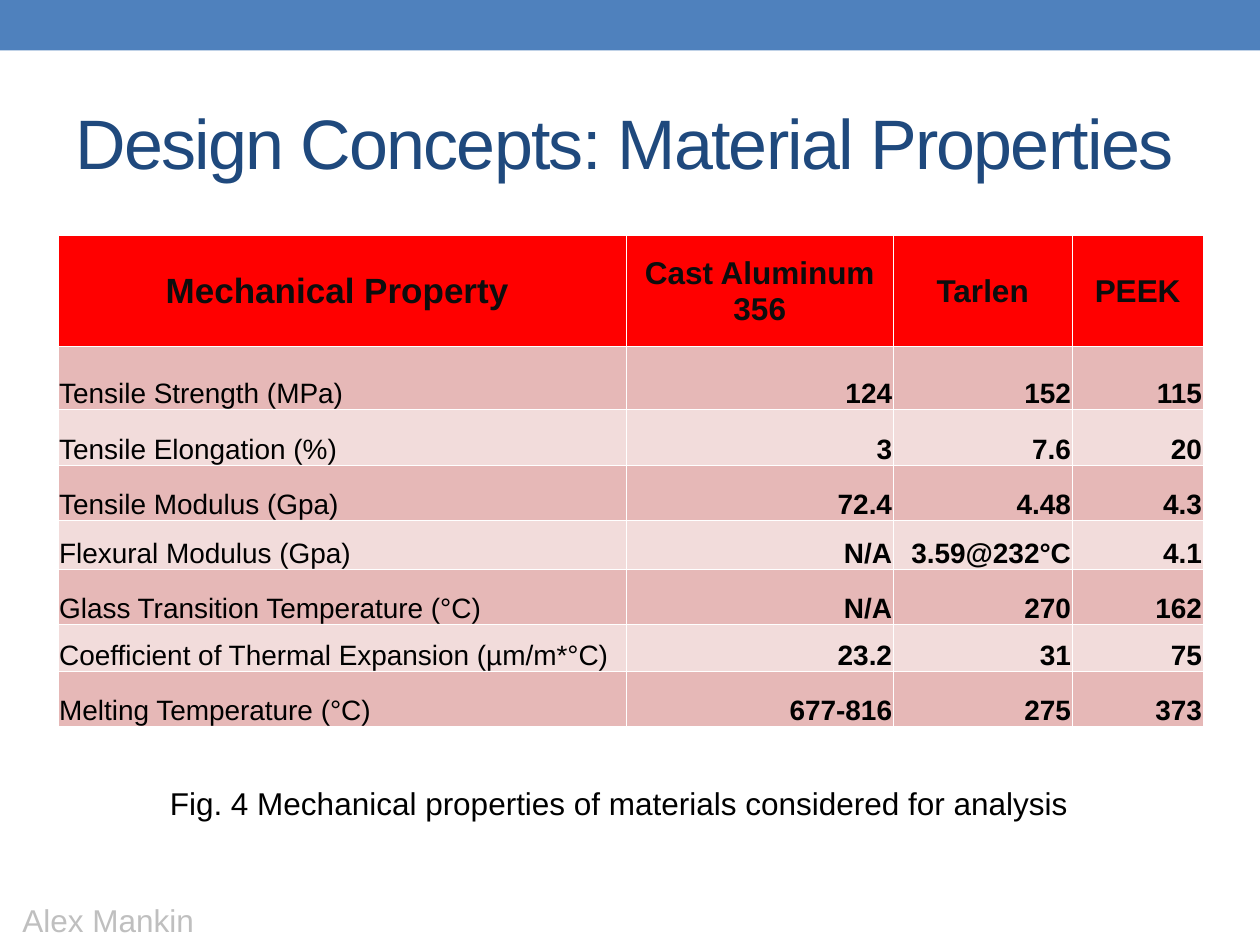
from lxml import etree
from pptx import Presentation
from pptx.dml.color import RGBColor
from pptx.enum.shapes import MSO_SHAPE
from pptx.enum.text import MSO_ANCHOR, MSO_AUTO_SIZE, PP_ALIGN
from pptx.oxml.ns import qn
from pptx.util import Inches, Pt

RECTANGLE = MSO_SHAPE.RECTANGLE
LEFT, CENTER, RIGHT = PP_ALIGN.LEFT, PP_ALIGN.CENTER, PP_ALIGN.RIGHT
MIDDLE, BOTTOM = MSO_ANCHOR.MIDDLE, MSO_ANCHOR.BOTTOM
NO_FIT, GROW = MSO_AUTO_SIZE.NONE, MSO_AUTO_SIZE.SHAPE_TO_FIT_TEXT
TITLE_ONLY = 5

HEADER = ["Mechanical Property ", "Cast Aluminum 356", "Tarlen", "PEEK"]
PROPERTIES = [
    ["Tensile Strength (MPa)", "124", "152", "115"],
    ["Tensile Elongation (%)", "3", "7.6", "20"],
    ["Tensile Modulus (Gpa)", "72.4", "4.48", "4.3"],
    ["Flexural Modulus (Gpa)", "N/A", "3.59@232°C", "4.1"],
    ["Glass Transition Temperature (°C)", "N/A", "270", "162"],
    ["Coefficient of Thermal Expansion (µm/m*°C)", "23.2", "31", "75"],
    ["Melting Temperature (°C)", "677-816", "275", "373"],
]
COLUMN_WIDTHS = [4.51, 2.12, 1.42, 1.04]
ROW_HEIGHTS = [0.88, 0.5, 0.44, 0.44, 0.39, 0.44, 0.37, 0.44]


def color(hex_code):
    return RGBColor.from_string(hex_code)


class SlideBuilder:
    font = "Arial"
    ink = "000000"
    accent = "4F81BD"
    title_ink = "1F497D"
    muted = "BFBFBF"
    header_ink = "0D0D0D"
    header_fill = "FF0000"
    bands = ("E6B8B7", "F2DCDB")
    rule = "FFFFFF"

    def __init__(self, slide):
        self.slide = slide

    def add_text(self, frame, text, size, ink, align=LEFT, bold=False):
        paragraph = frame.paragraphs[0]
        paragraph.alignment = align
        run = paragraph.add_run()
        run.text = text
        run.font.name = self.font
        run.font.size = Pt(size)
        run.font.bold = bold
        run.font.color.rgb = color(ink)
        return run

    def bar(self, left, top, width, height):
        band = self.slide.shapes.add_shape(
            RECTANGLE, Inches(left), Inches(top), Inches(width), Inches(height))
        band.shadow.inherit = False
        band.fill.solid()
        band.fill.fore_color.rgb = color(self.accent)
        band.line.fill.background()

    def title(self, text, left, top, width, height):
        heading = self.slide.shapes.title
        heading.left, heading.top = Inches(left), Inches(top)
        heading.width, heading.height = Inches(width), Inches(height)
        frame = heading.text_frame
        frame.auto_size = NO_FIT
        frame.vertical_anchor = MIDDLE
        run = self.add_text(frame, text, 40, self.title_ink)
        run.font._element.set("spc", "-100")

    def label(self, text, left, top, width, height, ink, wrap=True):
        box = self.slide.shapes.add_textbox(
            Inches(left), Inches(top), Inches(width), Inches(height))
        box.text_frame.word_wrap = wrap
        box.text_frame.auto_size = GROW
        self.add_text(box.text_frame, text, 18, ink)

    def outline(self, cell, sides):
        properties = cell._tc.get_or_add_tcPr()
        for side in sides:
            line = etree.SubElement(properties, qn(f"a:ln{side}"), w=str(Pt(0.5)))
            fill = etree.SubElement(line, qn("a:solidFill"))
            etree.SubElement(fill, qn("a:srgbClr"), val=self.rule)

    def cell(self, cell, text, fill, anchor, size, ink, align, bold):
        cell.margin_left = cell.margin_right = cell.margin_top = Inches(0.01)
        cell.margin_bottom = 0
        cell.vertical_anchor = anchor
        self.outline(cell, "LRTB")
        cell.fill.solid()
        cell.fill.fore_color.rgb = color(fill)
        self.add_text(cell.text_frame, text, size, ink, align, bold)

    def table(self, header, body, left, top, widths, heights):
        grid = self.slide.shapes.add_table(
            len(heights), len(widths), Inches(left), Inches(top),
            Inches(sum(widths)), Inches(sum(heights))).table
        for column, width in zip(grid.columns, widths):
            column.width = Inches(width)
        for row, height in zip(grid.rows, heights):
            row.height = Inches(height)
        for c, name in enumerate(header):
            self.cell(grid.cell(0, c), name, self.header_fill, MIDDLE,
                      18 if c else 20, self.header_ink, CENTER, True)
        for r, values in enumerate(body):
            for c, value in enumerate(values):
                self.cell(grid.cell(r + 1, c), value, self.bands[r % 2], BOTTOM,
                          16, self.ink, RIGHT if c else LEFT, c > 0)


def main():
    deck = Presentation()
    deck.slide_width, deck.slide_height = Inches(10), Inches(7.5)
    builder = SlideBuilder(deck.slides.add_slide(deck.slide_layouts[TITLE_ONLY]))
    builder.bar(0, 0, 10, 0.4)
    builder.title("Design Concepts: Material Properties", 0.5, 0.58, 9, 1.08)
    builder.table(HEADER, PROPERTIES, 0.46, 1.87, COLUMN_WIDTHS, ROW_HEIGHTS)
    builder.label("Fig. 4 Mechanical properties of materials considered for analysis",
                  1.25, 6.17, 7.83, 0.4, builder.ink)
    builder.label("Alex Mankin", 0.08, 7.1, 1.58, 0.4, builder.muted, wrap=False)
    deck.save("out.pptx")


if __name__ == "__main__":
    main()
